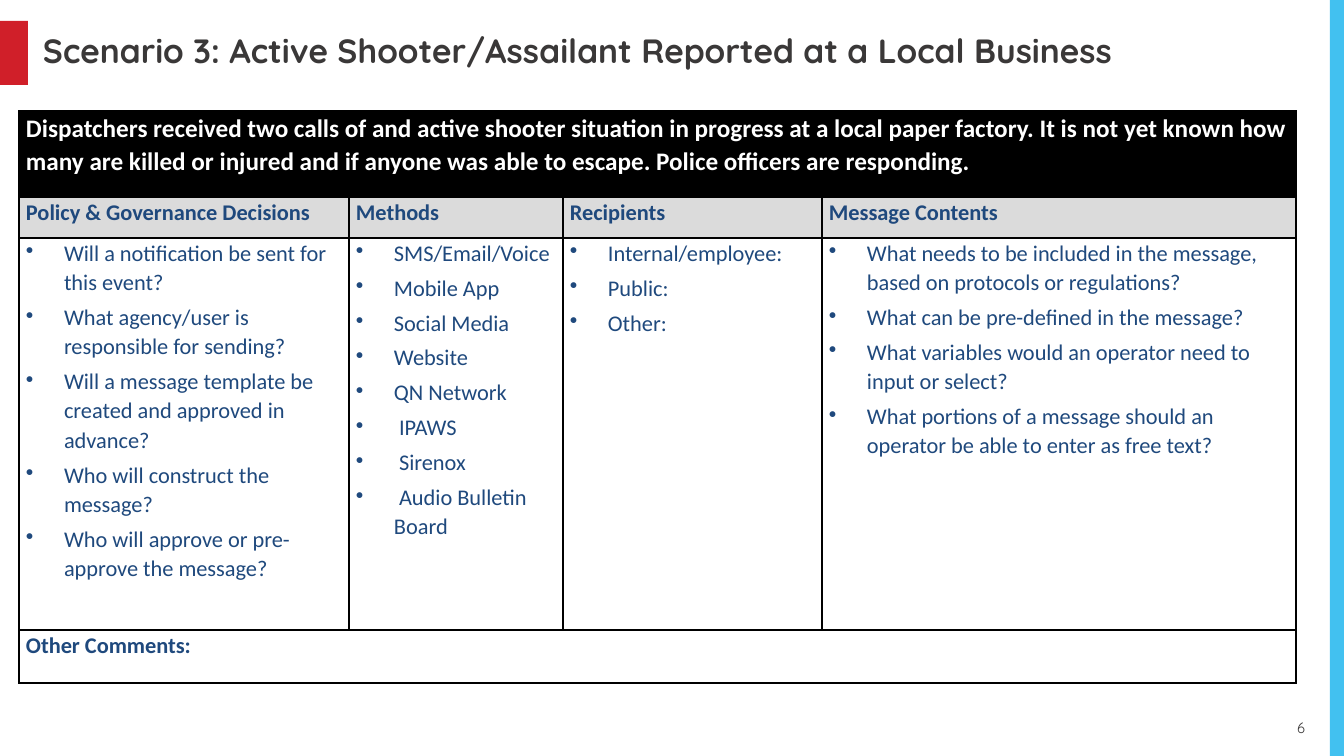
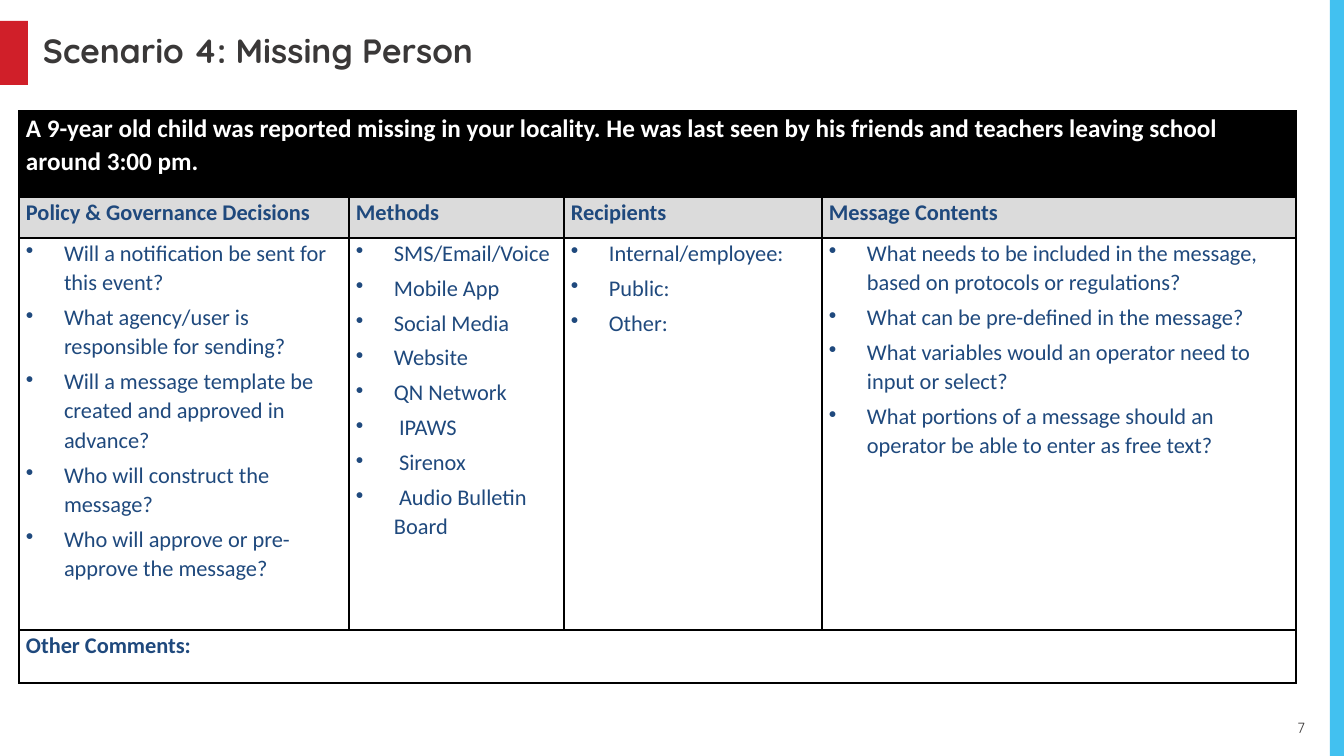
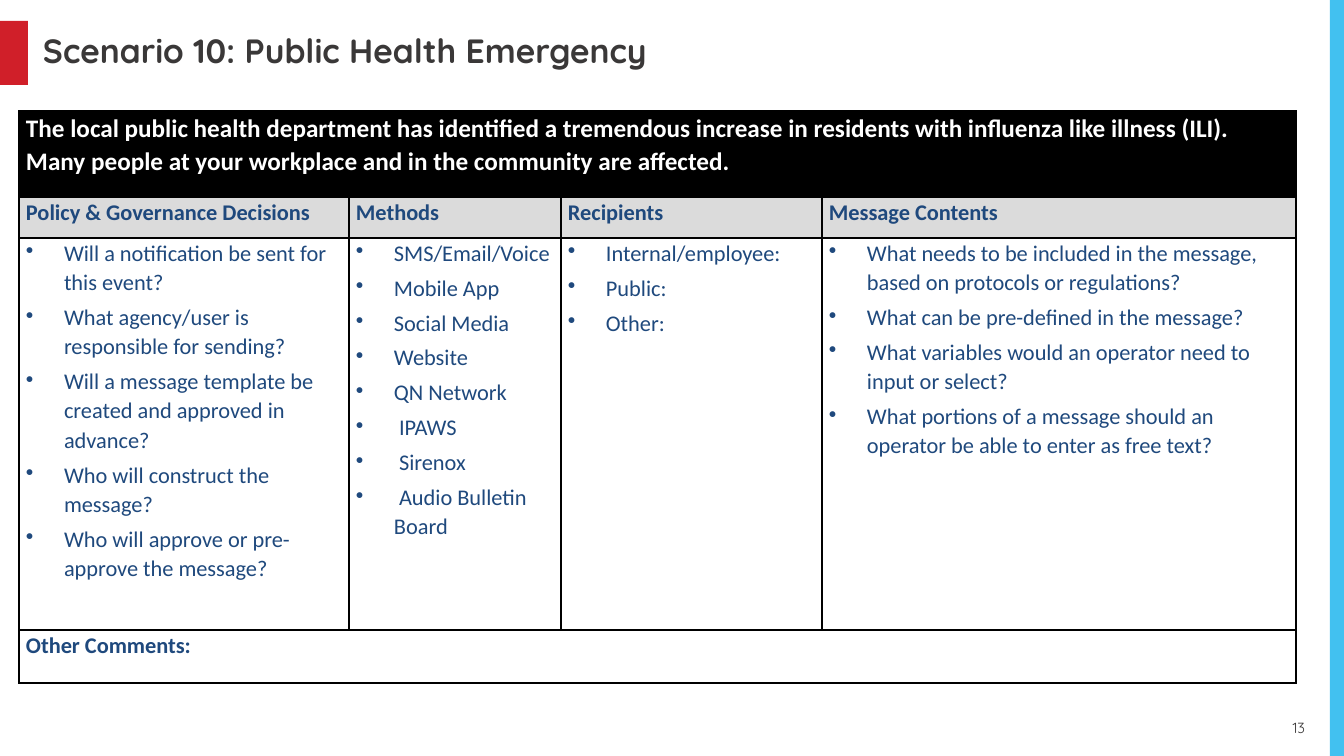
import pptx
import pptx.util
import pptx.dml.color
import pptx.enum.shapes
import pptx.enum.text
import pptx.oxml.ns
from lxml import etree

RED = pptx.dml.color.RGBColor(0xD0, 0x1F, 0x29)
SKY = pptx.dml.color.RGBColor(0x42, 0xC1, 0xF0)
CHARCOAL = pptx.dml.color.RGBColor(0x3A, 0x38, 0x38)
NAVY = pptx.dml.color.RGBColor(0x1F, 0x49, 0x7D)
BLACK = pptx.dml.color.RGBColor(0, 0, 0)
WHITE = pptx.dml.color.RGBColor(0xFF, 0xFF, 0xFF)
GRAY = pptx.dml.color.RGBColor(0xDB, 0xDB, 0xDB)
TITLE_FONT, TABLE_FONT = "Quicksand", "Calibri"

SCENARIOS = [
    {
        "number": 6,
        "title": "Scenario 3: Active Shooter/Assailant Reported at a Local Business",
        "summary": "Dispatchers received two calls of and active shooter situation in progress "
                   "at a local paper factory. It is not yet known how many are killed or injured "
                   "and if anyone was able to escape. Police officers are responding.",
        "methods_width": 214,
    },
    {
        "number": 7,
        "title": "Scenario 4: Missing Person",
        "summary": "A 9-year old child was reported missing in your locality. He was last seen "
                   "by his friends and teachers leaving school around 3:00 pm.",
        "methods_width": 215,
    },
    {
        "number": 13,
        "title": "Scenario 10: Public Health Emergency",
        "summary": "The local public health department has identified a tremendous increase in "
                   "residents with influenza like illness (ILI). Many people at your workplace "
                   "and in the community are affected.",
        "methods_width": 212,
    },
]

PLANNING = {
    "Policy & Governance Decisions": [
        "Will a notification be sent for this event?",
        "What agency/user is responsible for sending?",
        "Will a message template be created and approved in advance?",
        "Who will construct the message?",
        "Who will approve or pre-approve the message?",
    ],
    "Methods": [
        "SMS/Email/Voice",
        "Mobile App",
        "Social Media",
        "Website",
        "QN Network",
        " IPAWS",
        " Sirenox",
        " Audio Bulletin Board",
    ],
    "Recipients": ["Internal/employee:", "Public:", "Other:"],
    "Message Contents": [
        "What needs to be included in the message, based on protocols or regulations?",
        "What can be pre-defined in the message?",
        "What variables would an operator need to input or select?",
        "What portions of a message should an operator be able to enter as free text?",
    ],
}
COMMENTS = "Other Comments:"

PAGE_WIDTH, PAGE_HEIGHT = 1344, 756
BAND_TOP, BAND_HEIGHT, MARKER_WIDTH, EDGE_WIDTH = 21, 64, 28, 14
TABLE_LEFT, TABLE_TOP, TABLE_WIDTH = 19, 111, 1277
POLICY_WIDTH, CONTENTS_WIDTH = 330, 474
ROW_HEIGHTS = [86, 41, 392, 53]
CELL_INSET, BULLET_INDENT = 7, 38


def px(length):
    return pptx.util.Emu(round(length * 914400 / 100.8))


def add_band(page, left, top, width, height, color):
    band = page.shapes.add_shape(
        pptx.enum.shapes.MSO_SHAPE.RECTANGLE, px(left), px(top), px(width), px(height))
    band.shadow.inherit = False
    band.fill.solid()
    band.fill.fore_color.rgb = color
    band.line.fill.background()


def style(paragraph, font_name, size, color, bold=False):
    paragraph.font.name = font_name
    paragraph.font.size = pptx.util.Pt(size)
    paragraph.font.color.rgb = color
    paragraph.font.bold = bold


def add_label(page, text, left, top, width, height, insets, size, bold=False):
    box = page.shapes.add_textbox(px(left), px(top), px(width), px(height))
    frame = box.text_frame
    frame.word_wrap = True
    frame.vertical_anchor = pptx.enum.text.MSO_ANCHOR.MIDDLE
    frame.margin_left, frame.margin_right = map(px, insets)
    frame.margin_top = frame.margin_bottom = px(5)
    paragraph = frame.paragraphs[0]
    paragraph.text = text
    style(paragraph, TITLE_FONT, size, CHARCOAL, bold)
    return paragraph


def add_bullet(paragraph):
    properties = paragraph._p.get_or_add_pPr()
    properties.set("marL", str(px(BULLET_INDENT)))
    properties.set("indent", str(-px(BULLET_INDENT)))
    etree.SubElement(properties, pptx.oxml.ns.qn("a:buChar")).set("char", "•")


def format_cell(cell, fill):
    cell.margin_left = cell.margin_right = px(CELL_INSET)
    cell.margin_top = cell.margin_bottom = 0
    properties = cell._tc.get_or_add_tcPr()
    for side in ("a:lnL", "a:lnR", "a:lnT", "a:lnB"):
        line = etree.SubElement(properties, pptx.oxml.ns.qn(side))
        line.set("w", str(pptx.util.Pt(1)))
        solid = etree.SubElement(line, pptx.oxml.ns.qn("a:solidFill"))
        etree.SubElement(solid, pptx.oxml.ns.qn("a:srgbClr")).set("val", str(BLACK))
    if fill is None:
        cell.fill.background()
    else:
        cell.fill.solid()
        cell.fill.fore_color.rgb = fill


def write_cell(cell, lines, size=16, color=NAVY, bold=True, bulleted=False):
    frame = cell.text_frame
    for index, line in enumerate(lines):
        paragraph = frame.add_paragraph() if index else frame.paragraphs[0]
        paragraph.text = line
        if bulleted:
            add_bullet(paragraph)
        paragraph.line_spacing = 1.07
        if index:
            paragraph.space_before = pptx.util.Pt(4)
        style(paragraph, TABLE_FONT, size, color, bold)


def add_planning_table(page, scenario):
    methods = scenario["methods_width"]
    recipients = TABLE_WIDTH - POLICY_WIDTH - methods - CONTENTS_WIDTH
    widths = [POLICY_WIDTH, methods, recipients, CONTENTS_WIDTH]
    table = page.shapes.add_table(
        len(ROW_HEIGHTS), len(widths), px(TABLE_LEFT), px(TABLE_TOP),
        px(TABLE_WIDTH), px(sum(ROW_HEIGHTS))).table
    table.first_row = table.horz_banding = False
    for column, width in zip(table.columns, widths):
        column.width = px(width)
    for row, height, fill in zip(table.rows, ROW_HEIGHTS, (BLACK, GRAY, None, None)):
        row.height = px(height)
        for cell in row.cells:
            format_cell(cell, fill)
    for row_index in (0, 3):
        table.cell(row_index, 0).merge(table.cell(row_index, len(widths) - 1))
    write_cell(table.cell(0, 0), [scenario["summary"]], size=18, color=WHITE)
    for index, (heading, items) in enumerate(PLANNING.items()):
        write_cell(table.cell(1, index), [heading])
        write_cell(table.cell(2, index), items, bold=False, bulleted=True)
    write_cell(table.cell(3, 0), [COMMENTS])


def add_page(deck, scenario):
    page = deck.slides.add_slide(deck.slide_layouts[6])
    add_band(page, 0, BAND_TOP, MARKER_WIDTH, BAND_HEIGHT, RED)
    add_band(page, PAGE_WIDTH - EDGE_WIDTH, 0, EDGE_WIDTH, PAGE_HEIGHT, SKY)
    number = add_label(page, str(scenario["number"]), 1253, 714, 52, 28, (10, 0), 10.5)
    number.alignment = pptx.enum.text.PP_ALIGN.RIGHT
    title = add_label(page, scenario["title"], MARKER_WIDTH, BAND_TOP,
                      TABLE_WIDTH, BAND_HEIGHT, (15, 10), 24, bold=True)
    title.line_spacing = 0.9
    add_planning_table(page, scenario)


def main():
    deck = pptx.Presentation()
    deck.slide_width, deck.slide_height = px(PAGE_WIDTH), px(PAGE_HEIGHT)
    for scenario in SCENARIOS:
        add_page(deck, scenario)
    deck.save("out.pptx")


if __name__ == "__main__":
    main()
